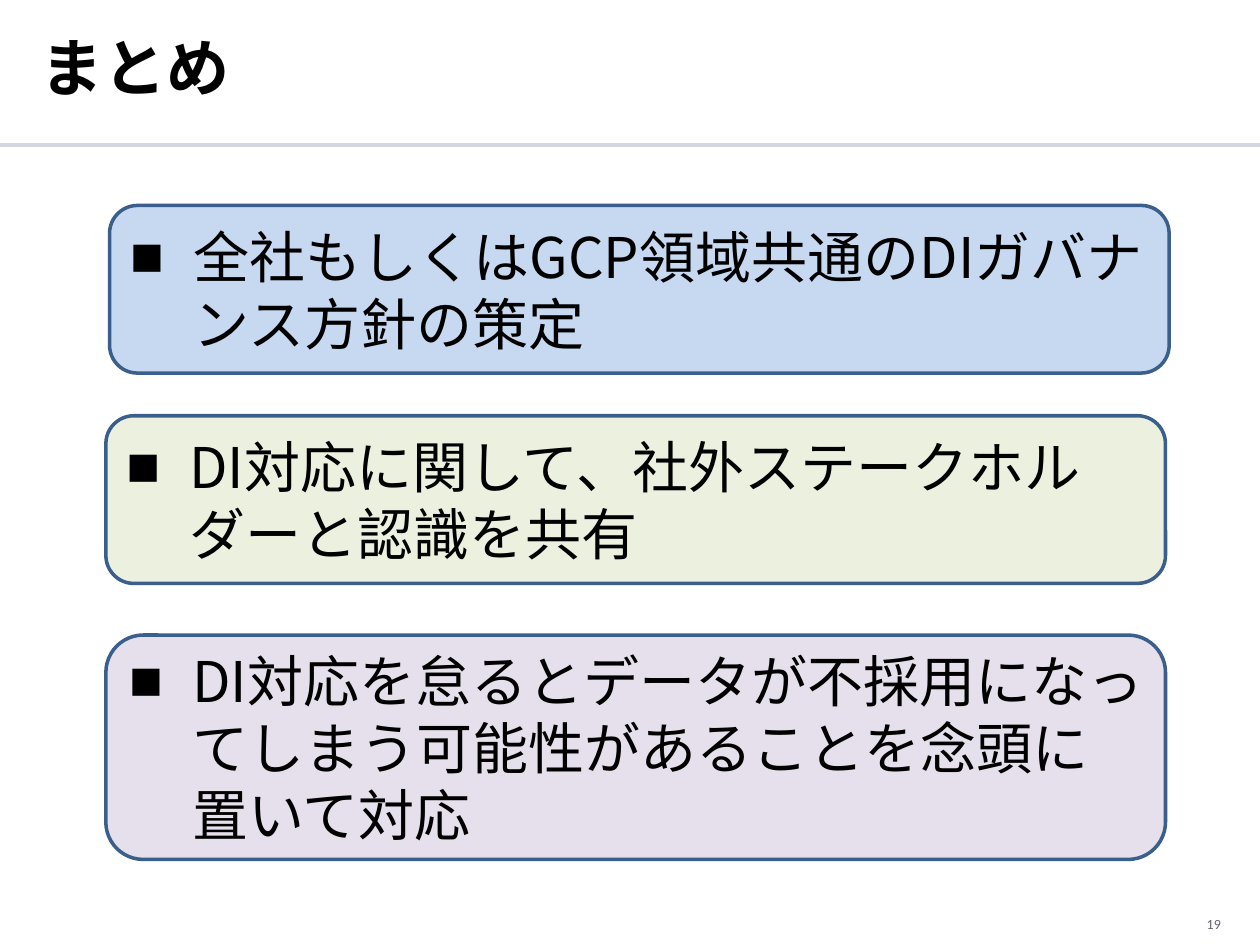
import pptx
import pptx.util
import pptx.dml.color
import pptx.enum.shapes
import pptx.enum.text
import pptx.oxml
import pptx.oxml.ns

Pt = pptx.util.Pt
ALIGN = pptx.enum.text.PP_ALIGN
ANCHOR = pptx.enum.text.MSO_ANCHOR
CJK = "Noto Sans CJK JP"

COLORS = {
    "black": "000000", "gray": "636672", "rule": "D4D7E2", "edge": "3A5F8C",
    "blue": "C6D9F1", "green": "EBF1DE", "purple": "E6E0EC",
}
TITLE = "まとめ"
NUMBER = "19"
CARDS = [
    ("全社もしくはGCP領域共通のDIガバナンス方針の策定", "blue", 62.6, 117.4, 95.8),
    ("DI対応に関して、社外ステークホルダーと認識を共有", "green", 60.5, 237.6, 95.8),
    ("DI対応を怠るとデータが不採用になってしまう可能性があることを念頭に置いて対応",
     "purple", 60.5, 362.9, 128.2),
]
CARD_WIDTH = 605.5
INDENT = 36


def color(name):
    return pptx.dml.color.RGBColor.from_string(COLORS[name])


def child(parent, tag, **attrs):
    node = pptx.oxml.parse_xml(f"<a:{tag} {pptx.oxml.ns.nsdecls('a')}/>")
    for key, value in attrs.items():
        node.set(key, value)
    parent.append(node)


def write(shape, text, size, face, ink, align, anchor, inset, bold=False, bullet=None):
    frame = shape.text_frame
    frame.word_wrap = True
    frame.vertical_anchor = anchor
    side, edge = inset
    frame.margin_left = frame.margin_right = Pt(side)
    frame.margin_top = frame.margin_bottom = Pt(edge)
    para = frame.paragraphs[0]
    para.text = text
    para.alignment = align
    if bullet:
        props = para._p.get_or_add_pPr()
        props.set("marL", str(Pt(INDENT)))
        props.set("indent", str(Pt(-INDENT)))
        child(props, "buFont", typeface="Arial")
        child(props, "buChar", char=bullet)
    font = para.font
    font.size, font.bold, font.name = Pt(size), bold, face
    font.color.rgb = color(ink)
    child(font._element, "ea", typeface=CJK)


deck = pptx.Presentation()
deck.slide_width, deck.slide_height = Pt(720), Pt(540)
slide = deck.slides.add_slide(deck.slide_layouts[6])
shapes = slide.shapes

rule = shapes.add_connector(
    pptx.enum.shapes.MSO_CONNECTOR.STRAIGHT, Pt(0), Pt(82.8), Pt(720), Pt(82.8))
rule.line.color.rgb = color("rule")
rule.line.width = Pt(2)
child(rule._element.spPr, "effectLst")

number = shapes.add_textbox(Pt(529.9), Pt(513.4), Pt(167.8), Pt(28.8))
write(number, NUMBER, 8, "Calibri", "gray", ALIGN.RIGHT, ANCHOR.MIDDLE, (0, 0))

title = shapes.add_textbox(Pt(23), Pt(13), Pt(562.3), Pt(51.1))
write(title, TITLE, 36, "Arial", "black", ALIGN.LEFT, ANCHOR.TOP, (0, 3.6), bold=True)

for text, fill, left, top, height in CARDS:
    card = shapes.add_shape(
        pptx.enum.shapes.MSO_SHAPE.FLOWCHART_ALTERNATE_PROCESS,
        Pt(left), Pt(top), Pt(CARD_WIDTH), Pt(height))
    card.shadow.inherit = False
    card.fill.solid()
    card.fill.fore_color.rgb = color(fill)
    card.line.color.rgb = color("edge")
    card.line.width = Pt(2)
    write(card, text, 32, CJK, "black", ALIGN.LEFT, ANCHOR.MIDDLE, (7.2, 3.6), bullet="■")

deck.save("out.pptx")
